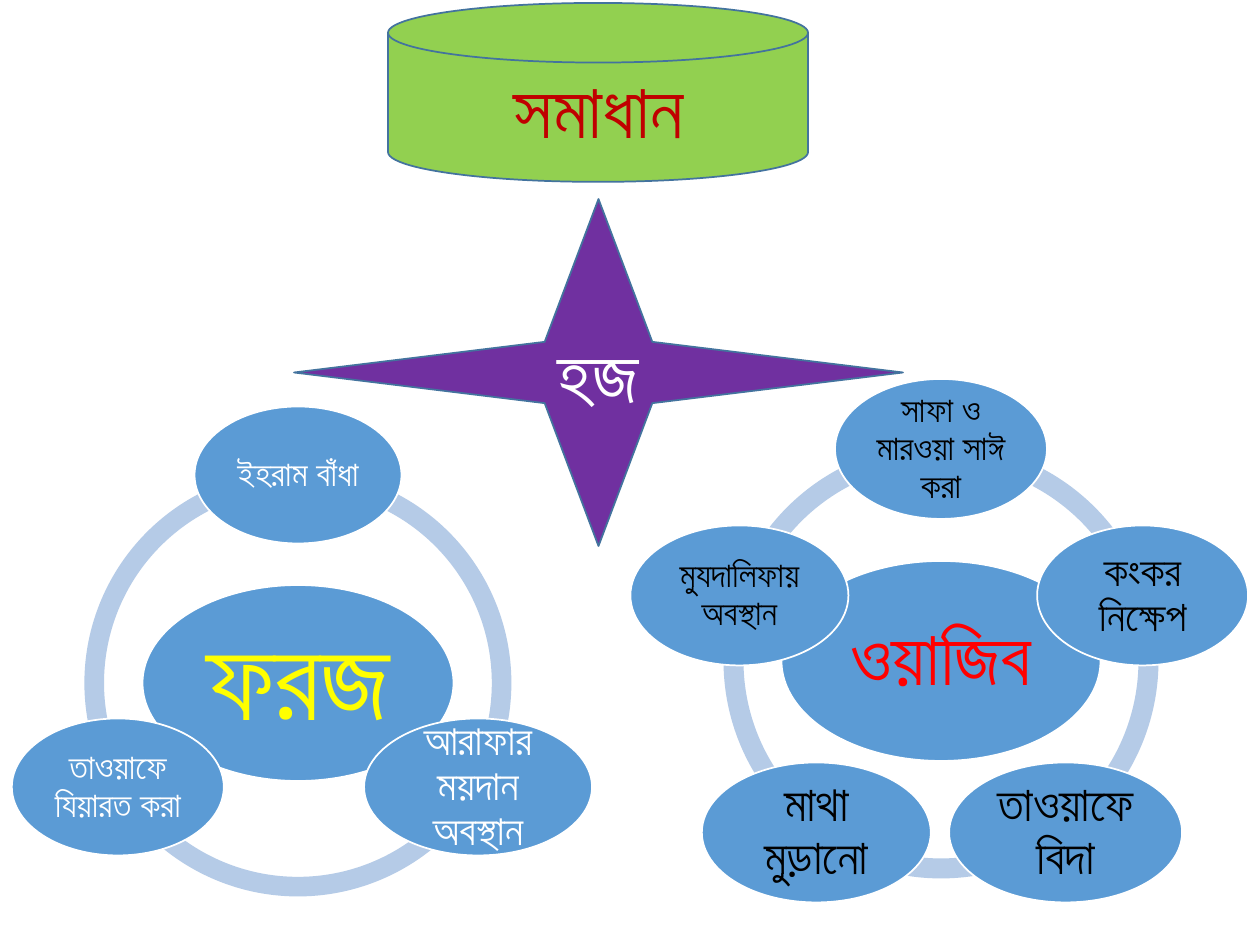
from dataclasses import dataclass
from math import cos, radians, sin

from pptx import Presentation
from pptx.dml.color import RGBColor
from pptx.enum.shapes import MSO_SHAPE
from pptx.enum.text import MSO_ANCHOR, MSO_AUTO_SIZE, PP_ALIGN
from pptx.util import Emu, Pt

DISK = MSO_SHAPE.FLOWCHART_MAGNETIC_DISK
STAR = MSO_SHAPE.STAR_4_POINT
ELLIPSE = MSO_SHAPE.OVAL
ARC = MSO_SHAPE.BLOCK_ARC
CENTER = PP_ALIGN.CENTER
MIDDLE = MSO_ANCHOR.MIDDLE
NO_AUTOFIT = MSO_AUTO_SIZE.NONE

EMU_PER_PX = 914400 / 126
ADJUSTMENT_PER_DEGREE = 0.6  # 60000 units per degree, stored in 100000ths
ARC_THICKNESS = 0.046
TIGHT = 0.9

# Bengali letters with a nukta dot are stored as single characters
NUKTA = chr(0x09BC)
DOTTED_LETTERS = {"য": chr(0x09DF), "ড": chr(0x09DC)}


@dataclass(frozen=True)
class Theme:
    disk: str = "92D050"
    star: str = "7030A0"
    outline: str = "43739E"
    node: str = "5B9BD5"
    arc: str = "B5CBE7"
    white: str = "FFFFFF"
    black: str = "000000"
    yellow: str = "FFFF00"
    red: str = "FF0000"
    dark_red: str = "C00000"
    font: str = "Arial"
    alt_font: str = "Calibri"
    small: int = 20
    medium: int = 24
    large: int = 28
    heading: int = 44
    huge: int = 66


THEME = Theme()


@dataclass(frozen=True)
class Box:
    left: float
    top: float
    width: int
    height: int


@dataclass(frozen=True)
class Node:
    text: str
    width: int
    height: int
    size: int
    color: str
    inset: int = 4
    font: str = THEME.font


@dataclass(frozen=True)
class Cycle:
    center_x: int
    center_y: int
    diameter: int
    orbit: int
    hub: Node
    nodes: tuple[Node, ...]


def px(length: float) -> Emu:
    return Emu(round(length * EMU_PER_PX))


def place(box: Box) -> tuple[Emu, Emu, Emu, Emu]:
    return px(box.left), px(box.top), px(box.width), px(box.height)


def centered(center_x: float, center_y: float, width: int, height: int) -> Box:
    return Box(center_x - width / 2, center_y - height / 2, width, height)


def compose(text: str) -> str:
    for letter, dotted in DOTTED_LETTERS.items():
        text = text.replace(letter + NUKTA, dotted)
    return text


def add_form(shapes, kind, box: Box, fill: str, line: str | None = None):
    form = shapes.add_shape(kind, *place(box))
    form.shadow.inherit = False
    form.fill.solid()
    form.fill.fore_color.rgb = RGBColor.from_string(fill)
    if line:
        form.line.color.rgb = RGBColor.from_string(line)
        form.line.width = Pt(1)
    else:
        form.line.fill.background()
    return form


def write(shape, text: str, size: int, color: str, font: str = THEME.font,
          spacing: float = 1.0) -> None:
    frame = shape.text_frame
    frame.text = compose(text)
    frame.word_wrap = True
    frame.auto_size = NO_AUTOFIT
    frame.vertical_anchor = MIDDLE
    paragraph = frame.paragraphs[0]
    paragraph.alignment = CENTER
    paragraph.line_spacing = spacing
    style = paragraph.runs[0].font
    style.name = font
    style.size = Pt(size)
    style.color.rgb = RGBColor.from_string(color)


def add_node(shapes, node: Node, center_x: float, center_y: float) -> None:
    box = centered(center_x, center_y, node.width, node.height)
    ellipse = add_form(shapes, ELLIPSE, box, THEME.node, THEME.white)
    write(ellipse, node.text, node.size, node.color, node.font, TIGHT)
    frame = ellipse.text_frame
    frame.margin_left = frame.margin_right = px(node.inset)
    frame.margin_top = frame.margin_bottom = px(node.inset)


def add_cycle(slide, cycle: Cycle) -> None:
    shapes = slide.shapes.add_group_shape().shapes
    step = 360 / len(cycle.nodes)
    # Nodes run clockwise from the top
    angles = [(270 + step * i) % 360 for i in range(len(cycle.nodes))]
    ring = centered(cycle.center_x, cycle.center_y, cycle.diameter, cycle.diameter)
    for angle in angles:
        arc = add_form(shapes, ARC, ring, THEME.arc)
        arc.adjustments[0] = angle * ADJUSTMENT_PER_DEGREE
        arc.adjustments[1] = (angle + step) % 360 * ADJUSTMENT_PER_DEGREE
        arc.adjustments[2] = ARC_THICKNESS
    add_node(shapes, cycle.hub, cycle.center_x, cycle.center_y)
    for node, angle in zip(cycle.nodes, angles):
        add_node(shapes, node,
                 cycle.center_x + cycle.orbit * cos(radians(angle)),
                 cycle.center_y + cycle.orbit * sin(radians(angle)))


FARZ = Cycle(
    298, 683, 427, 208,
    Node("ফরজ", 311, 196, THEME.huge, THEME.yellow, 12),
    (
        Node("ইহরাম বাঁধা", 207, 137, THEME.small, THEME.white),
        Node("আরাফার ময়দান অবস্থান", 228, 137, THEME.medium, THEME.white),
        Node("তাওয়াফে যিয়ারত করা", 212, 137, THEME.small, THEME.white),
    ),
)
WAJIB = Cycle(
    941, 661, 435, 212,
    Node("ওয়াজিব", 319, 200, THEME.heading, THEME.red, 8),
    (
        Node("সাফা ও মারওয়া সাঈ করা", 212, 140, THEME.small, THEME.black),
        Node("কংকর নিক্ষেপ", 211, 140, THEME.medium, THEME.black),
        Node("তাওয়াফে বিদা", 233, 140, THEME.large, THEME.black, 5),
        Node("মাথা মুড়ানো", 229, 140, THEME.large, THEME.black, 5, THEME.alt_font),
        Node("মুযদালিফায় অবস্থান", 218, 140, THEME.small, THEME.black),
    ),
)
DISK_BOX = Box(388, 3, 420, 179)
# The front face of the disk, below its lid
HEADING_BOX = Box(389, 63, 420, 89)
STAR_BOX = Box(294, 199, 609, 347)


def main() -> None:
    deck = Presentation()
    deck.slide_width, deck.slide_height = px(1260), px(945)
    slide = deck.slides.add_slide(deck.slide_layouts[5])

    # Left cycle
    add_cycle(slide, FARZ)

    # Heading: the title sits in front of its disk
    disk = add_form(slide.shapes, DISK, DISK_BOX, THEME.disk, THEME.outline)
    heading = slide.shapes.title
    heading.left, heading.top, heading.width, heading.height = place(HEADING_BOX)
    write(heading, "সমাধান", THEME.heading, THEME.dark_red)
    disk._element.addnext(heading._element)

    # Right cycle
    add_cycle(slide, WAJIB)

    # Central star
    star = add_form(slide.shapes, STAR, STAR_BOX, THEME.star, THEME.outline)
    write(star, "হজ", THEME.heading, THEME.white, THEME.alt_font)

    deck.save("out.pptx")


if __name__ == "__main__":
    main()
